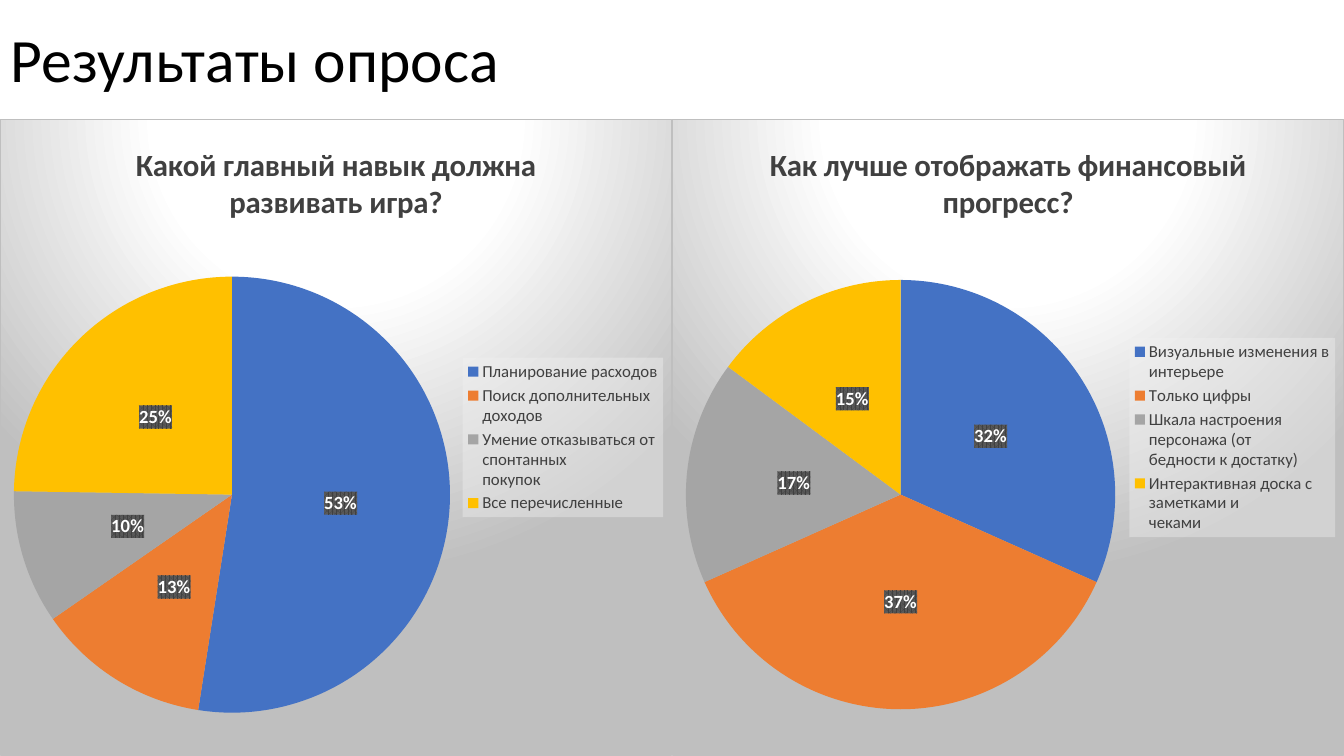
from pptx import Presentation
from pptx.chart.data import CategoryChartData
from pptx.dml.color import RGBColor
from pptx.enum.chart import XL_CHART_TYPE, XL_LABEL_POSITION, XL_LEGEND_POSITION
from pptx.enum.text import MSO_ANCHOR
from pptx.oxml import parse_xml
from pptx.util import Pt

BLACK = RGBColor(0x00, 0x00, 0x00)
WHITE = RGBColor(0xFF, 0xFF, 0xFF)
DARK = RGBColor(0x40, 0x40, 0x40)
CHARCOAL = RGBColor(0x59, 0x59, 0x59)
SILVER = RGBColor(0xBF, 0xBF, 0xBF)
PALE = RGBColor(0xF2, 0xF2, 0xF2)
BLUE = RGBColor(0x44, 0x72, 0xC4)
ORANGE = RGBColor(0xED, 0x7D, 0x31)
GRAY = RGBColor(0xA5, 0xA5, 0xA5)
YELLOW = RGBColor(0xFF, 0xC0, 0x00)
SLICE_COLORS = [BLUE, ORANGE, GRAY, YELLOW]

CHART_SPACE = "http://schemas.openxmlformats.org/drawingml/2006/chart"
DRAWING_SPACE = "http://schemas.openxmlformats.org/drawingml/2006/main"
SLIDE_WIDTH, SLIDE_HEIGHT = 960, 540
CHART_TOP = 85

SURVEY = [
    ("Какой главный навык должна развивать игра?",
     [("Планирование расходов", 53),
      ("Поиск дополнительных доходов", 13),
      ("Умение отказываться от спонтанных\nпокупок", 10),
      ("Все перечисленные", 25)],
     (0.02, 0.24, 0.65, 0.7)),
    ("Как лучше отображать финансовый прогресс?",
     [("Визуальные изменения в интерьере", 32),
      ("Только цифры", 37),
      ("Шкала настроения персонажа (от\nбедности к достатку)", 17),
      ("Интерактивная доска с заметками и\nчеками", 15)],
     (0.02, 0.25, 0.64, 0.68)),
]


def chart_xml(tag, content):
    """Build a chart element around the given markup."""
    return parse_xml(f'<c:{tag} xmlns:c="{CHART_SPACE}" xmlns:a="{DRAWING_SPACE}">'
                     f'{content}</c:{tag}>')


def color_xml(color, inner=""):
    """Return the markup of one colour."""
    return f'<a:srgbClr val="{color}">{inner}</a:srgbClr>'


class SurveySlide:
    """Hold the style and the current slide."""

    def __init__(self, slide, font_name="Calibri"):
        """Keep the slide and its font."""
        self.slide = slide
        self.font_name = font_name

    def style(self, font, size, color, bold=False):
        """Apply the slide's typeface with a size and colour."""
        font.name = self.font_name
        font.size = Pt(size)
        font.color.rgb = color
        font.bold = bold

    def heading(self, text, left, top, width, height):
        """Add the slide heading."""
        box = self.slide.shapes.add_textbox(Pt(left), Pt(top), Pt(width), Pt(height))
        frame = box.text_frame
        frame.word_wrap = True
        frame.vertical_anchor = MSO_ANCHOR.MIDDLE
        frame.text = text
        para = frame.paragraphs[0]
        para.line_spacing = 0.9
        self.style(para.runs[0].font, 44, BLACK)

    def pie(self, question, answers, plot, left, top, width, height):
        """Add a pie chart for one question."""
        data = CategoryChartData()
        data.categories = [answer for answer, share in answers]
        data.add_series(question, [share for answer, share in answers])
        chart = self.slide.shapes.add_chart(
            XL_CHART_TYPE.PIE, Pt(left), Pt(top), Pt(width), Pt(height), data).chart
        self.style(chart.font, 10, BLACK)
        chart.has_title = True
        chart.chart_title.text_frame.text = question
        span = chart.chart_title.text_frame.paragraphs[0].runs[0]
        self.style(span.font, 22, DARK, bold=True)
        pie_plot = chart.plots[0]
        pie_plot.vary_by_categories = True
        for index, color in enumerate(SLICE_COLORS):
            fill = pie_plot.series[0].points[index].format.fill
            fill.solid()
            fill.fore_color.rgb = color
        self.legend(chart)
        self.labels(pie_plot)
        self.backdrop(chart)
        self.place_plot(chart, plot)

    def legend(self, chart):
        """Put a translucent legend on the right."""
        chart.has_legend = True
        legend = chart.legend
        legend.position = XL_LEGEND_POSITION.RIGHT
        legend.include_in_layout = False
        self.style(legend.font, 12, DARK)
        color = color_xml(PALE, '<a:alpha val="39000"/>')
        legend._element.find(f"{{{CHART_SPACE}}}overlay").addnext(
            chart_xml("spPr", f"<a:solidFill>{color}</a:solidFill>"))

    def labels(self, pie_plot):
        """Show the rounded shares on dark patterned labels."""
        pie_plot.has_data_labels = True
        labels = pie_plot.data_labels
        labels.show_percentage = False
        labels.show_value = True
        labels.number_format = '0"%"'
        labels.number_format_is_linked = False
        labels.position = XL_LABEL_POSITION.CENTER
        self.style(labels.font, 13.3, WHITE, bold=True)
        labels._element.find(f"{{{CHART_SPACE}}}numFmt").addnext(chart_xml(
            "spPr", f'<a:pattFill prst="pct75"><a:fgClr>{color_xml(DARK)}</a:fgClr>'
                    f'<a:bgClr>{color_xml(CHARCOAL)}</a:bgClr></a:pattFill>'))

    def backdrop(self, chart):
        """Fill the chart area with a radial gradient and a thin border."""
        stops = "".join(f'<a:gs pos="{place * 1000}">{color_xml(color)}</a:gs>'
                        for place, color in [(0, WHITE), (39, WHITE), (100, SILVER)])
        chart._chartSpace.find(f"{{{CHART_SPACE}}}chart").addnext(chart_xml(
            "spPr", f'<a:gradFill><a:gsLst>{stops}</a:gsLst><a:path path="circle">'
                    '<a:fillToRect l="50000" t="-80000" r="50000" b="180000"/></a:path>'
                    f'</a:gradFill><a:ln w="{Pt(0.75)}"><a:solidFill>{color_xml(SILVER)}'
                    '</a:solidFill></a:ln>'))

    def place_plot(self, chart, plot):
        """Fix the pie's place as fractions of the chart area."""
        area = chart._chartSpace.find(f".//{{{CHART_SPACE}}}plotArea")
        for layout in area.findall(f"{{{CHART_SPACE}}}layout"):
            area.remove(layout)
        sizes = "".join(f'<c:{name} val="{value}"/>' for name, value in zip("xywh", plot))
        area.insert(0, chart_xml(
            "layout", '<c:manualLayout><c:layoutTarget val="inner"/><c:xMode val="edge"/>'
                      f'<c:yMode val="edge"/>{sizes}</c:manualLayout>'))


def main():
    """Build and save the survey slide."""
    deck = Presentation()
    deck.slide_width, deck.slide_height = Pt(SLIDE_WIDTH), Pt(SLIDE_HEIGHT)
    page = SurveySlide(deck.slides.add_slide(deck.slide_layouts[6]))
    page.heading("Результаты опроса", 0.5, -7.5, 828, 104.4)
    chart_width = SLIDE_WIDTH / len(SURVEY)
    for index, (question, answers, plot) in enumerate(SURVEY):
        page.pie(question, answers, plot, index * chart_width, CHART_TOP,
                 chart_width, SLIDE_HEIGHT - CHART_TOP)
    deck.save("out.pptx")


if __name__ == "__main__":
    main()
